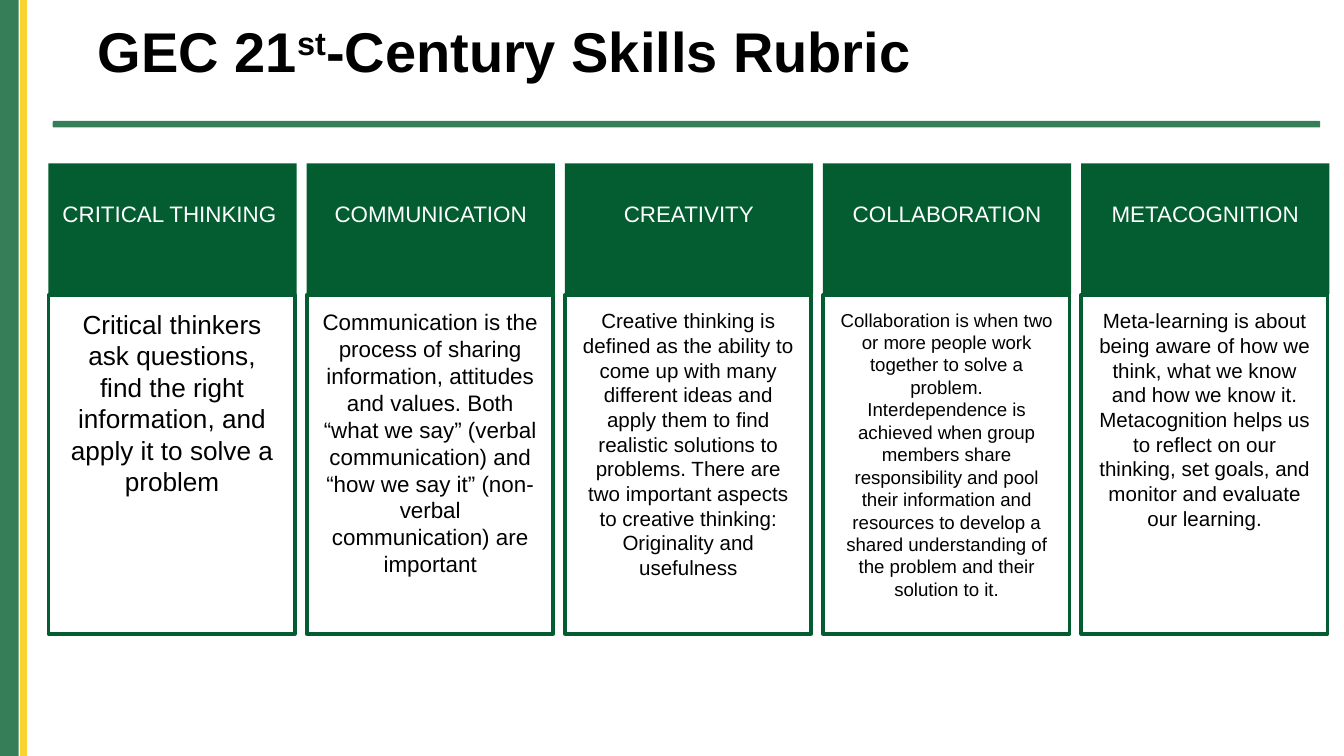
from dataclasses import dataclass

from pptx import Presentation
from pptx.dml.color import RGBColor
from pptx.enum.shapes import MSO_SHAPE as Shape
from pptx.enum.text import MSO_ANCHOR as Anchor, PP_ALIGN as Align
from pptx.util import Pt


@dataclass(frozen=True)
class Theme:
    font: str = "Arial"
    green: str = "035D30"
    sage: str = "367E58"
    yellow: str = "F9D32E"
    black: str = "000000"
    white: str = "FFFFFF"
    title: int = 30
    heading: int = 12


THEME = Theme()

# Heading, description, description size
SKILLS = [
    ("CRITICAL THINKING ",
     "Critical thinkers ask questions, find the right information, and apply it "
     "to solve a problem", 14),
    ("COMMUNICATION",
     "Communication is the process of sharing information, attitudes and values. "
     "Both “what we say” (verbal communication) and “how we say it” (non-verbal "
     "communication) are important", 12),
    ("CREATIVITY",
     "Creative thinking is defined as the ability to come up with many different "
     "ideas and apply them to find realistic solutions to problems. There are two "
     "important aspects to creative thinking: Originality and usefulness", 11),
    ("COLLABORATION",
     "Collaboration is when two or more people work together to solve a problem. "
     "Interdependence is achieved when group members share responsibility and pool "
     "their information and resources to develop a shared understanding of the "
     "problem and their solution to it.", 10),
    ("METACOGNITION",
     "Meta-learning is about being aware of how we think, what we know and how we "
     "know it. Metacognition helps us to reflect on our thinking, set goals, and "
     "monitor and evaluate our learning.", 11),
]
LEFT, TOP, PITCH = 26, 87.5, 138.3


def add_block(s, x, y, w, h, fill=None, line=None, kind=Shape.RECTANGLE):
    sp = s.shapes.add_shape(kind, Pt(x), Pt(y), Pt(w), Pt(h))
    sp.shadow.inherit = False
    if fill:
        sp.fill.solid()
        sp.fill.fore_color.rgb = RGBColor.from_string(fill)
    else:
        sp.fill.background()
    if line:
        sp.line.color.rgb = RGBColor.from_string(line)
        sp.line.width = Pt(2)
    else:
        sp.line.fill.background()
    return sp


def add_box(s, x, y, w, h):
    return s.shapes.add_textbox(Pt(x), Pt(y), Pt(w), Pt(h))


def write(sp, *texts, size, color=THEME.black, bold=False, align=Align.CENTER,
          anchor=Anchor.TOP, insets=(7.2, 3.6, 7.2, 3.6)):
    """Fill one paragraph with a run per text; return the runs."""
    tf = sp.text_frame
    tf.word_wrap = True
    tf.vertical_anchor = anchor
    (tf.margin_left, tf.margin_top,
     tf.margin_right, tf.margin_bottom) = map(Pt, insets)
    p = tf.paragraphs[0]
    p.alignment = align
    runs = []
    for text in texts:
        r = p.add_run()
        r.text = text
        r.font.name, r.font.size, r.font.bold = THEME.font, Pt(size), bold
        r.font.color.rgb = RGBColor.from_string(color)
        runs.append(r)
    return runs


def add_frame(s, height):
    # Side stripes
    for x, w, color in [(0, 8.5, THEME.sage), (8, 2, THEME.sage),
                        (10.8, 3.6, THEME.yellow)]:
        add_block(s, x, 0, w, height, color)
    # Rule under the title
    add_block(s, 28.3, 64.8, 679, 3.5, THEME.sage, kind=Shape.ROUNDED_RECTANGLE)


def add_title(s):
    runs = write(add_box(s, 29.5, 5.8, 681, 49), "GEC 21", "st",
                 "-Century Skills Rubric", size=THEME.title, bold=True,
                 align=Align.LEFT, insets=(23, 2.9, 5, 2.9))
    runs[1]._r.get_or_add_rPr().set("baseline", "30000")


def add_skill(s, x, heading, description, size):
    # The deep bottom inset lifts the heading above the middle
    head = add_block(s, x, TOP, 133, 70, THEME.green)
    write(head, heading, size=THEME.heading, color=THEME.white,
          anchor=Anchor.MIDDLE, insets=(7.2, 3.6, 7.2, 19.7))
    add_block(s, x, TOP + 70.5, 132, 181.5, line=THEME.green)
    write(add_box(s, x + 1.4, TOP + 74.2, 129.6, 165), description, size=size)


def main():
    prs = Presentation()
    prs.slide_width, prs.slide_height = Pt(720), Pt(405)
    s = prs.slides.add_slide(prs.slide_layouts[6])
    add_frame(s, 405)
    add_title(s)
    for i, skill in enumerate(SKILLS):
        add_skill(s, LEFT + i * PITCH, *skill)
    prs.save("out.pptx")


if __name__ == "__main__":
    main()
